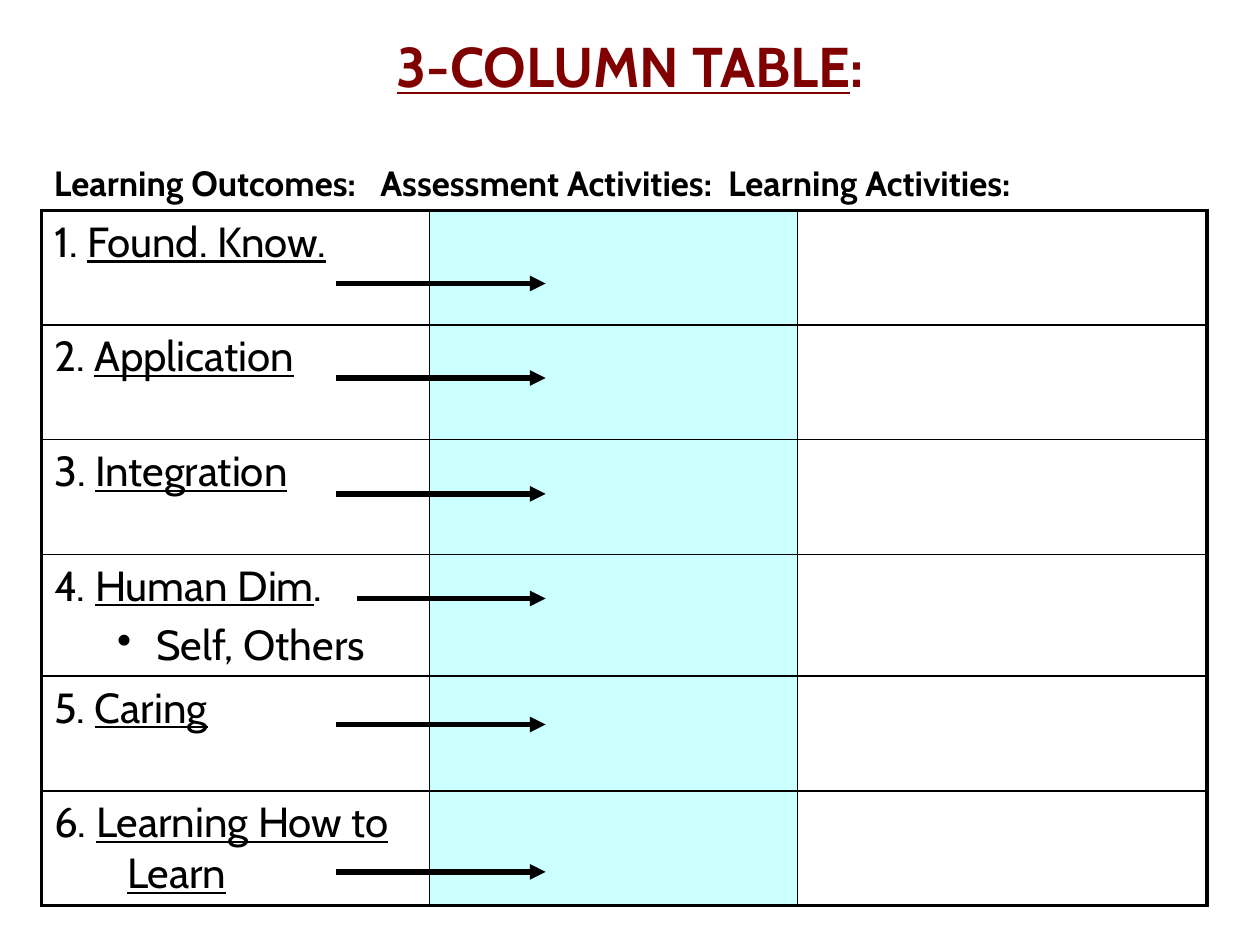
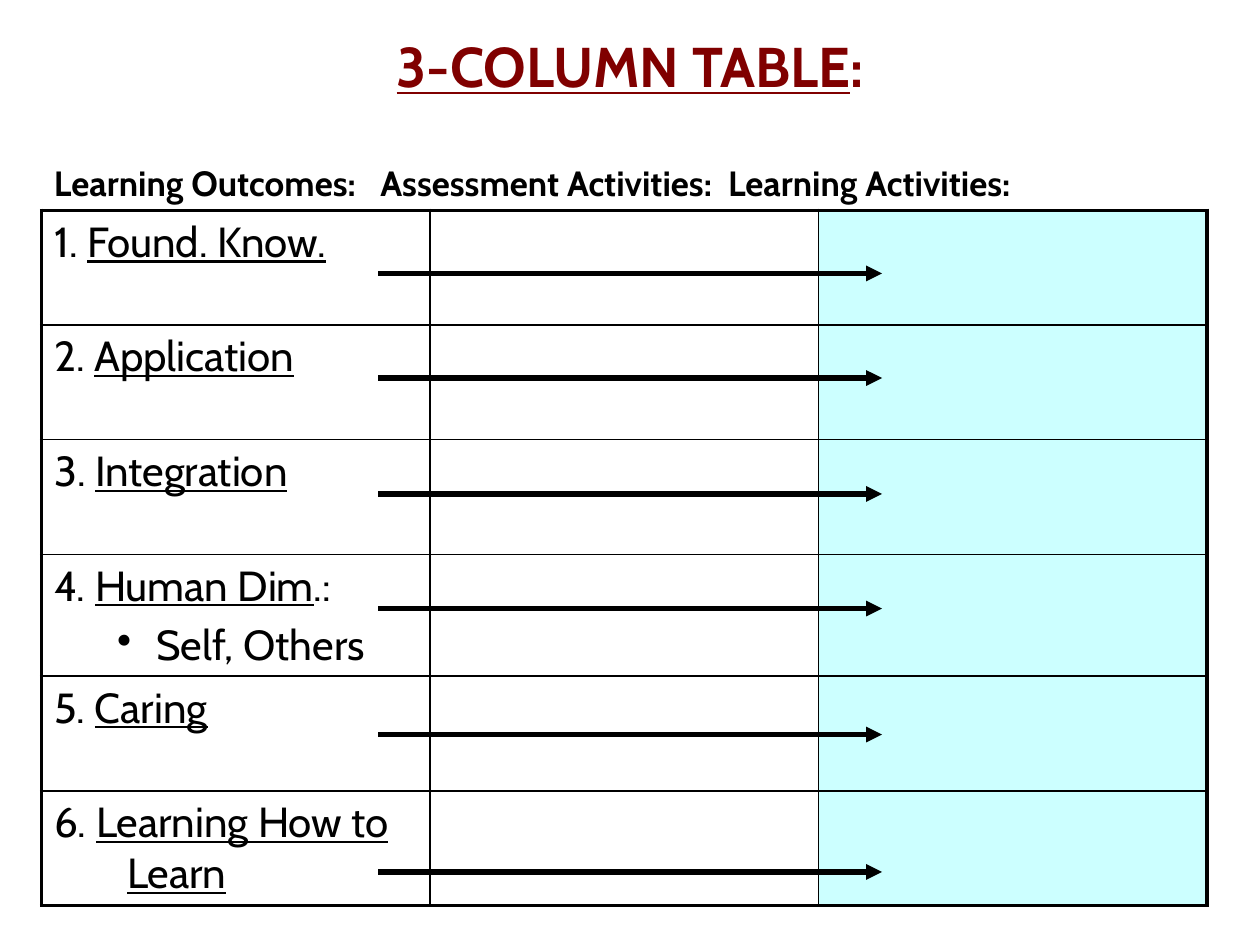
from dataclasses import dataclass

from lxml import etree
from pptx import Presentation
from pptx.dml import color
from pptx.enum import shapes, text
from pptx.oxml import ns
from pptx.util import Inches, Pt

# Shared look
FONT = "Cabin"
INK = "000000"
TITLE_RED = "800000"
HIGHLIGHT = "CCFFFF"
THIN, THICK, ARROW_WIDTH = 1, 2.25, 3
LEFT, WIDTH = 0.33, 9.25
TABLE_TOP, ROW_HEIGHT = 1.67, 0.91
HEADINGS = ("Learning Outcomes:", "Assessment Activities:", "Learning Activities:")
HEADING_TABS = (2.59, 5.35)


@dataclass(frozen=True)
class Outcome:
    name: str
    bullet: str = ""


@dataclass(frozen=True)
class Arrow:
    start: float
    end: float
    y: float


@dataclass(frozen=True)
class TablePage:
    columns: tuple[float, ...]
    highlighted: int
    human_suffix: str
    arrows: tuple[Arrow, ...]


OUTCOMES = (
    Outcome("Found. Know."),
    Outcome("Application"),
    Outcome("Integration"),
    Outcome("Human Dim", bullet="Self, Others"),
    Outcome("Caring"),
    Outcome("Learning How to Learn"),
)

PAGES = (
    TablePage(
        columns=(3.08, 2.92, 3.25),
        highlighted=1,
        human_suffix=".",
        arrows=tuple(
            Arrow(2.83 if y == 4.75 else 2.67, 4.33, y)
            for y in (2.25, 3, 3.92, 4.75, 5.75, 6.92)
        ),
    ),
    TablePage(
        columns=(WIDTH / 3,) * 3,
        highlighted=2,
        human_suffix=".:",
        arrows=tuple(Arrow(3, 7, y) for y in (2.17, 3, 3.92, 4.83, 5.83, 6.92)),
    ),
)


def rgb(value: str) -> color.RGBColor:
    return color.RGBColor.from_string(value)


def add_child(parent, tag: str, **attributes: str):
    child = etree.SubElement(parent, ns.qn(tag))
    for name, value in attributes.items():
        child.set(name, value)
    return child


def add_span(para, wording: str, size: float, ink: str = INK,
             bold: bool = False, underline: bool = False) -> None:
    span = para.add_run()
    span.text = wording
    font = span.font
    font.name, font.size = FONT, Pt(size)
    font.bold, font.underline = bold, underline
    font.color.rgb = rgb(ink)


def set_indent(para, left: float, first: float):
    properties = para._p.get_or_add_pPr()
    properties.set("marL", str(Inches(left)))
    properties.set("indent", str(Inches(first)))
    return properties


# Title and column headings
def draw_title(page) -> None:
    title = page.shapes.title
    title.left, title.top = Inches(2.73), Inches(0.2)
    title.width, title.height = Inches(4.54), Inches(0.63)
    frame = title.text_frame
    frame.auto_size = text.MSO_AUTO_SIZE.NONE
    frame.vertical_anchor = text.MSO_ANCHOR.TOP
    para = frame.paragraphs[0]
    para.alignment = text.PP_ALIGN.CENTER
    add_span(para, "3-COLUMN TABLE", 32, TITLE_RED, bold=True, underline=True)
    add_span(para, ":", 32, TITLE_RED, bold=True)


def draw_headings(page) -> None:
    box = page.shapes.add_textbox(Inches(LEFT), Inches(1.23), Inches(WIDTH), Inches(0.44))
    box.text_frame.word_wrap = True
    para = box.text_frame.paragraphs[0]
    stops = add_child(para._p.get_or_add_pPr(), "a:tabLst")
    for position in HEADING_TABS:
        add_child(stops, "a:tab", pos=str(Inches(position)), algn="l")
    add_span(para, "\t".join(HEADINGS), 20, bold=True)


# Table
def set_borders(cell, outer: dict[str, bool]) -> None:
    properties = cell._tc.get_or_add_tcPr()
    for side, is_outer in outer.items():
        width = Pt(THICK if is_outer else THIN)
        line = add_child(properties, f"a:ln{side}", w=str(width))
        add_child(add_child(line, "a:solidFill"), "a:srgbClr", val=INK)


def write_outcome(cell, number: int, outcome: Outcome, suffix: str) -> None:
    para = cell.text_frame.paragraphs[0]
    set_indent(para, 0.58, -0.58)
    add_span(para, f"{number}. ", 24)
    add_span(para, outcome.name, 24, underline=True)
    if outcome.bullet:
        add_span(para, suffix, 24)
        para = cell.text_frame.add_paragraph()
        para.level = 1
        para.space_before = Pt(4.8)
        add_child(set_indent(para, 0.81, -0.31), "a:buChar", char="•")
        add_span(para, outcome.bullet, 24)


def draw_table(page, content: TablePage) -> None:
    rows, columns = len(OUTCOMES), len(content.columns)
    table = page.shapes.add_table(
        rows, columns, Inches(LEFT), Inches(TABLE_TOP),
        Inches(WIDTH), Inches(ROW_HEIGHT * rows),
    ).table
    table.first_row = table.horz_banding = False
    for column, width in zip(table.columns, content.columns):
        column.width = Inches(width)
    for row, outcome in enumerate(OUTCOMES):
        for column in range(columns):
            cell = table.cell(row, column)
            set_borders(cell, {
                "L": column == 0, "R": column == columns - 1,
                "T": row == 0, "B": row == rows - 1,
            })
            if column == content.highlighted:
                cell.fill.solid()
                cell.fill.fore_color.rgb = rgb(HIGHLIGHT)
            else:
                cell.fill.background()
        write_outcome(table.cell(row, 0), row + 1, outcome, content.human_suffix)


# Arrows from the outcomes to the highlighted column
def draw_arrow(page, arrow: Arrow) -> None:
    connector = page.shapes.add_connector(
        shapes.MSO_CONNECTOR.STRAIGHT,
        Inches(arrow.start), Inches(arrow.y), Inches(arrow.end), Inches(arrow.y),
    )
    connector.line.width = Pt(ARROW_WIDTH)
    connector.line.color.rgb = rgb(INK)
    add_child(connector.line._get_or_add_ln(), "a:tailEnd", type="triangle")
    add_child(connector._element.spPr, "a:effectLst")


def main() -> None:
    deck = Presentation()
    deck.slide_width, deck.slide_height = Inches(10), Inches(7.5)
    title_only = deck.slide_layouts[5]
    for content in PAGES:
        page = deck.slides.add_slide(title_only)
        draw_title(page)
        draw_headings(page)
        draw_table(page, content)
        for arrow in content.arrows:
            draw_arrow(page, arrow)
    deck.save("out.pptx")


if __name__ == "__main__":
    main()
